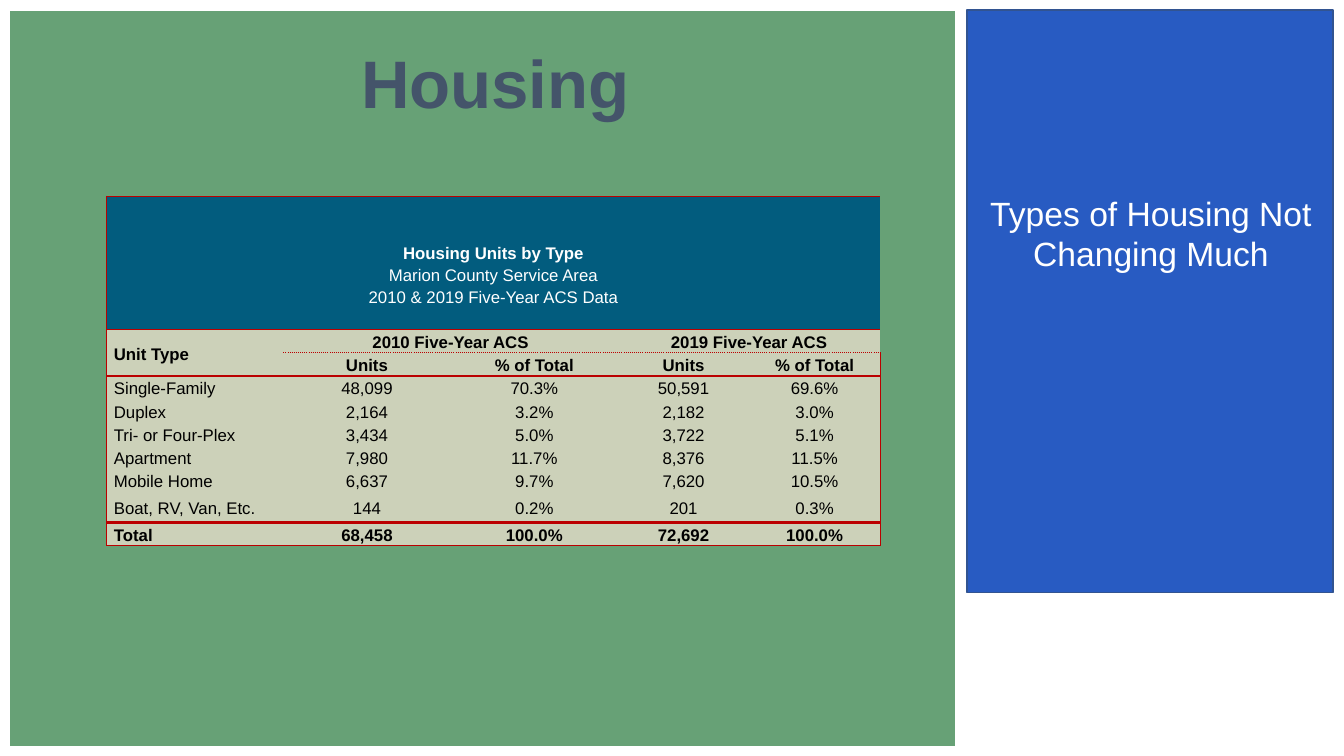
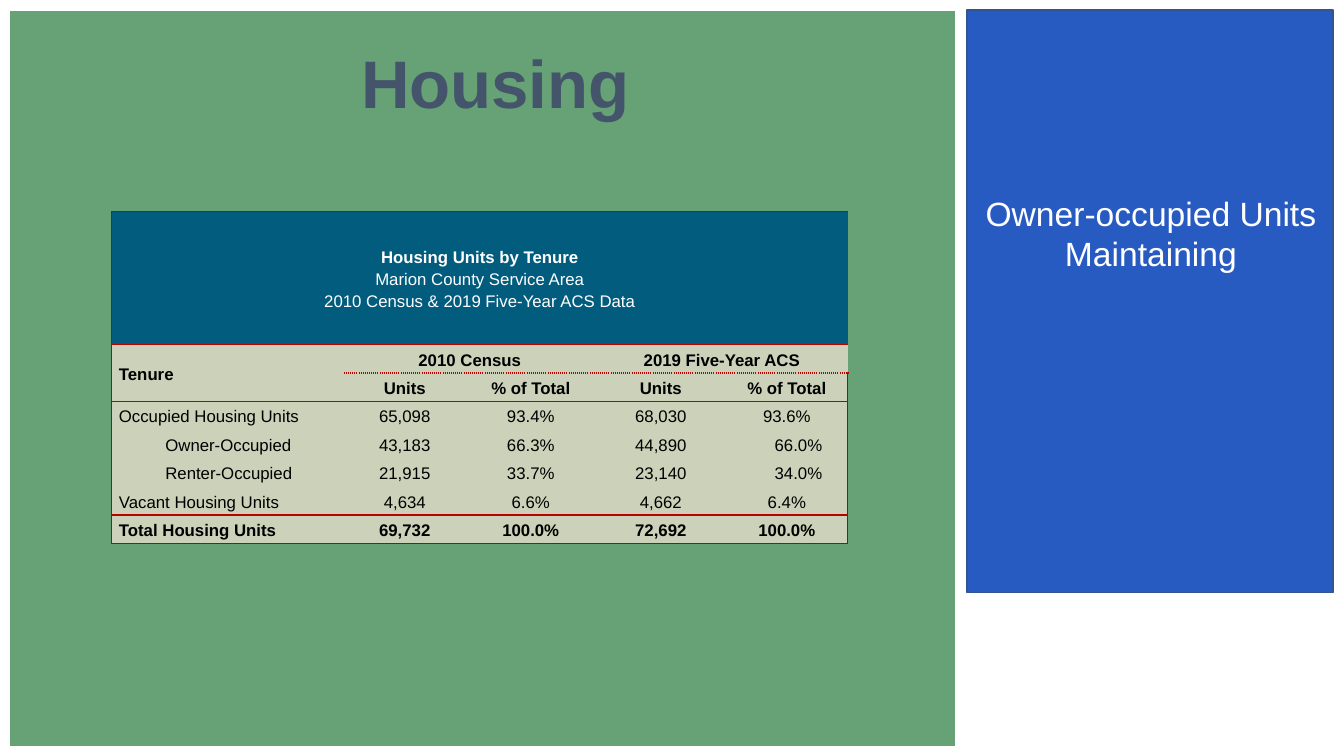
"""Build two slides on housing units by type and by tenure."""
import pptx
import pptx.dml.color
import pptx.enum.shapes
import pptx.enum.text
import pptx.oxml
import pptx.oxml.ns
import pptx.util

Inches, Pt = pptx.util.Inches, pptx.util.Pt
ALIGN, ANCHOR = pptx.enum.text.PP_ALIGN, pptx.enum.text.MSO_ANCHOR
WHITE, BLACK, TITLE_GREY = "FFFFFF", "000000", "44546A"
HEADER_BLUE, CELL_BEIGE, BORDER_RED = "025C7E", "CCD1B9", "BB0000"
INDENTS = {0: 0.46, 4: 0.23}

PANELS = [
    ((0.09, 0.1, 9.39, 7.31), "67A176", WHITE),
    ((9.59, 0.1, 3.63, 5.78), "285BC2", "325491"),
    ((9.62, 6.31, 3.62, 1.1), WHITE, WHITE),
]

SLIDES = [
    {
        "message": "Types of Housing Not Changing Much",
        "message_height": 1.31,
        "place": (1.06, 1.95),
        "columns": [1.75, 1.66, 1.66, 1.3, 1.3],
        "heights": [1.32] + [0.22] * 7 + [0.3, 0.22],
        "header_inset": 0.22,
        "header": ["Housing Units by Type", "Marion County Service Area",
                   "2010 & 2019 Five-Year ACS Data"],
        "indented": [],
        "rows": [
            ["Unit Type", "2010 Five-Year ACS", "", "2019 Five-Year ACS", ""],
            ["", "Units", "% of Total", "Units", "% of Total"],
            ["Single-Family", "48,099", "70.3%", "50,591", "69.6%"],
            ["Duplex", "2,164", "3.2%", "2,182", "3.0%"],
            ["Tri- or Four-Plex", "3,434", "5.0%", "3,722", "5.1%"],
            ["Apartment", "7,980", "11.7%", "8,376", "11.5%"],
            ["Mobile Home", "6,637", "9.7%", "7,620", "10.5%"],
            ["Boat, RV, Van, Etc.", "144", "0.2%", "201", "0.3%"],
            ["Total", "68,458", "100.0%", "72,692", "100.0%"],
        ],
    },
    {
        "message": "Owner-occupied Units Maintaining",
        "message_height": 1.99,
        "place": (1.11, 2.1),
        "columns": [2.3, 1.21, 1.29, 1.29, 1.21],
        "heights": [1.32, 0.28, 0.28, 0.28, 0.29, 0.28, 0.28, 0.28],
        "header_inset": 0,
        "header": ["Housing Units by Tenure", "Marion County Service Area",
                   "2010 Census & 2019 Five-Year ACS Data"],
        "indented": ["Owner-Occupied", "Renter-Occupied"],
        "rows": [
            ["Tenure", "2010 Census", "", "2019 Five-Year ACS", ""],
            ["", "Units", "% of Total", "Units", "% of Total"],
            ["Occupied Housing Units", "65,098", "93.4%", "68,030", "93.6%"],
            ["Owner-Occupied", "43,183", "66.3%", "44,890", "66.0%"],
            ["Renter-Occupied", "21,915", "33.7%", "23,140", "34.0%"],
            ["Vacant Housing Units", "4,634", "6.6%", "4,662", "6.4%"],
            ["Total Housing Units", "69,732", "100.0%", "72,692", "100.0%"],
        ],
    },
]


def color(value):
    return pptx.dml.color.RGBColor.from_string(value)


def write(frame, lines, size, ink, bolds, align=ALIGN.CENTER, spacing=None):
    for index, (line, bold) in enumerate(zip(lines, bolds)):
        para = frame.add_paragraph() if index else frame.paragraphs[0]
        para.alignment, para.line_spacing = align, spacing
        span = para.add_run()
        span.text = line
        for name, value in {"name": "Arial", "size": Pt(size), "bold": bold}.items():
            setattr(span.font, name, value)
        span.font.color.rgb = color(ink)


deck = pptx.Presentation()
deck.slide_width, deck.slide_height = Inches(13.33), Inches(7.5)

for content in SLIDES:
    page = deck.slides.add_slide(deck.slide_layouts[6])
    for place, fill, line in PANELS:
        panel = page.shapes.add_shape(
            pptx.enum.shapes.MSO_SHAPE.RECTANGLE, *map(Inches, place))
        panel.shadow.inherit = False
        panel.fill.solid()
        panel.fill.fore_color.rgb = color(fill)
        panel.line.color.rgb = color(line)
        panel.line.width = Pt(1)

    for text, place, size, ink, bold, anchor in [
        ("Housing", (0.28, 0.33, 9.27, 0.95), 48, TITLE_GREY, True, ANCHOR.MIDDLE),
        (content["message"], (9.65, 1.86, 3.53, content["message_height"]),
         24, WHITE, False, ANCHOR.TOP),
    ]:
        box = page.shapes.add_textbox(*map(Inches, place))
        box.text_frame.word_wrap = True
        box.text_frame.vertical_anchor = anchor
        write(box.text_frame, [text], size, ink, [bold])

    columns, heights = content["columns"], content["heights"]
    count = len(heights)
    left, top = content["place"]
    table = page.shapes.add_table(
        count, len(columns), Inches(left), Inches(top),
        Inches(sum(columns)), Inches(sum(heights))).table
    for column, width in zip(table.columns, columns):
        column.width = Inches(width)
    for row, height in zip(table.rows, heights):
        row.height = Inches(height)
    for first, last in [((0, 0), (0, 4)), ((1, 0), (2, 0)),
                        ((1, 1), (1, 2)), ((1, 3), (1, 4))]:
        table.cell(*first).merge(table.cell(*last))

    row_lines = {0: 1, 1: 1, 2: 1, 3: 1, count - 1: 2.25, count: 1}
    for r in range(count):
        for c in range(len(columns)):
            cell = table.cell(r, c)
            cell.vertical_anchor = ANCHOR.MIDDLE
            cell.margin_left = cell.margin_right = Inches(0.07)
            cell.margin_top = cell.margin_bottom = 0
            cell.fill.solid()
            cell.fill.fore_color.rgb = color(CELL_BEIGE if r else HEADER_BLUE)

            edges = {
                "lnL": 1 if c == 0 else 0,
                "lnR": 1 if c == len(columns) - 1 else 0,
                "lnT": 0 if (r, c) == (2, 0) else row_lines.get(r, 0),
                "lnB": 0 if (r, c) == (1, 0) else row_lines.get(r + 1, 0),
            }
            for position, (tag, width) in enumerate(edges.items()):
                dotted = (r, tag) in [(1, "lnB"), (2, "lnT")]
                paint = (f'<a:solidFill><a:srgbClr val="{BORDER_RED}"/></a:solidFill>'
                         f'<a:prstDash val="{"sysDot" if dotted else "solid"}"/>'
                         if width else "<a:noFill/>")
                cell._tc.get_or_add_tcPr().insert(position, pptx.oxml.parse_xml(
                    f'<a:{tag} {pptx.oxml.ns.nsdecls("a")} w="{Pt(width)}">'
                    f'{paint}</a:{tag}>'))

            if cell.is_spanned:
                continue
            if r == 0:
                cell.margin_top = Inches(content["header_inset"])
                write(cell.text_frame, content["header"], 12, WHITE,
                      [True, False, False], spacing=1.15)
                continue
            values = content["rows"][r - 1]
            write(cell.text_frame, [values[c]], 12, BLACK, [r in (1, 2, count - 1)],
                  ALIGN.CENTER if c else ALIGN.LEFT, 1.15)
            if values[0] in content["indented"] and c in INDENTS:
                cell.margin_left = Inches(0.07 + INDENTS[c])

deck.save("out.pptx")
